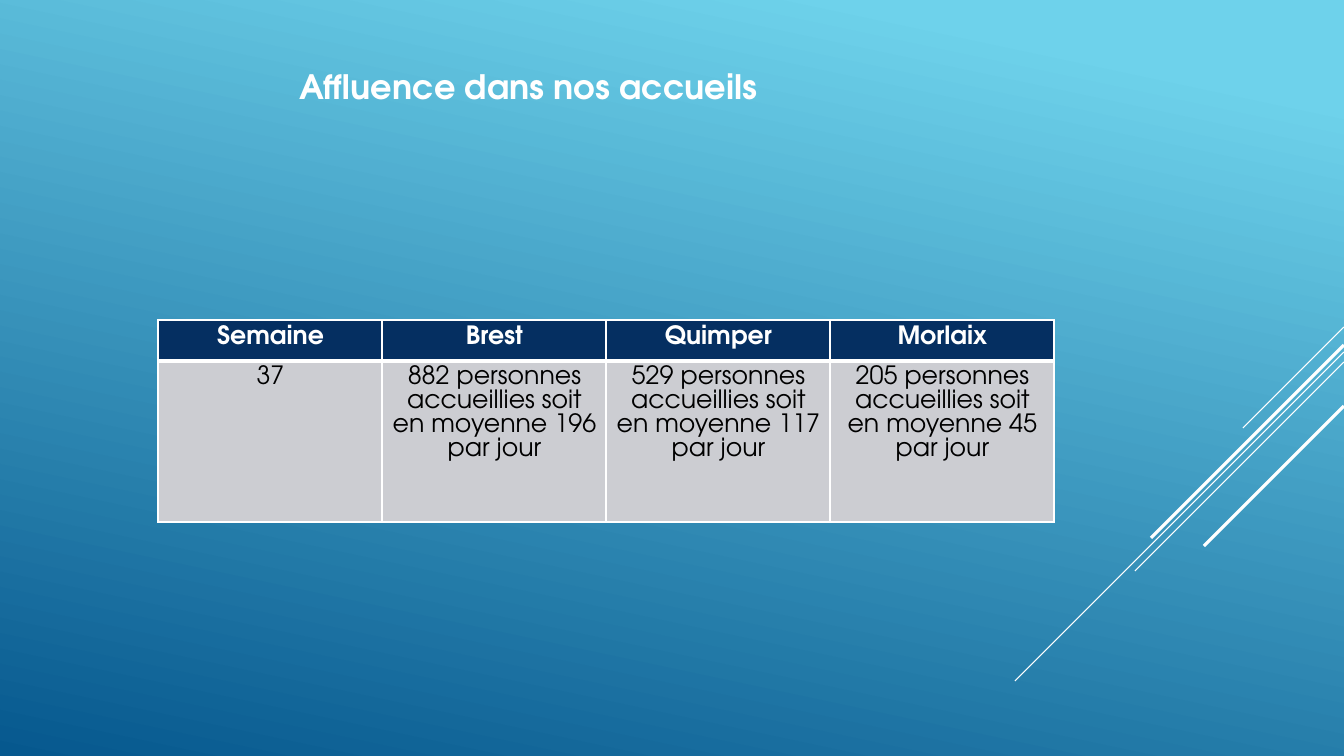
from dataclasses import dataclass

from lxml import etree
from pptx import Presentation
from pptx.dml.color import RGBColor
from pptx.enum.shapes import MSO_CONNECTOR
from pptx.enum.text import MSO_ANCHOR, MSO_AUTO_SIZE, PP_ALIGN
from pptx.oxml.ns import qn
from pptx.util import Emu, Pt

STRAIGHT = MSO_CONNECTOR.STRAIGHT
TOP, MIDDLE = MSO_ANCHOR.TOP, MSO_ANCHOR.MIDDLE
LEFT, CENTER = PP_ALIGN.LEFT, PP_ALIGN.CENTER
NO_AUTO_SIZE = MSO_AUTO_SIZE.NONE

SLIDE_WIDTH, SLIDE_HEIGHT = 1344, 756
TITLE_ONLY = 5
TITLE = "Affluence dans nos accueils"
WEEK = "37"
ATTENDANCE = [("Brest", 882, 196), ("Quimper", 529, 117), ("Morlaix", 205, 45)]
DIAGONALS = [(327, 101, 0.75), (352, 329, 0.75), (362, 209, 0.75),
             (345, 193, 2.25), (406, 140, 2.25)]


@dataclass(frozen=True)
class Theme:
    """Colours, font and sizes of the slide."""

    font: str = "TeX Gyre Adventor"
    white: str = "FFFFFF"
    black: str = "000000"
    header: str = "052F61"
    body: str = "CCCDD2"
    sky: str = "6ED2EB"
    sea: str = "06588E"
    title_size: int = 24
    table_size: int = 18
    thin: int = 1
    thick: int = 3


THEME = Theme()


def px(length):
    """Turn pixels into EMU."""
    return Emu(round(length * 914400 / 100.8))


def rgb(value):
    """Turn a hexadecimal string into a colour."""
    return RGBColor.from_string(value)


def apply(target, values):
    """Set every attribute of a format dict on the target."""
    for name, value in values.items():
        setattr(target, name, value)


def write(text_frame, text, size, color, bold, alignment, line_spacing):
    """Write one formatted paragraph into a text frame."""
    paragraph = text_frame.paragraphs[0]
    apply(paragraph, {"alignment": alignment, "line_spacing": line_spacing})
    run = paragraph.add_run()
    run.text = text
    apply(run.font, {"name": THEME.font, "size": Pt(size), "bold": bold})
    run.font.color.rgb = rgb(color)


def paint_background(slide):
    """Fill the background with a slanted gradient."""
    fill = slide.background.fill
    fill.gradient()
    fill.gradient_angle = 258
    stops = [(0.1, THEME.sky), (1.0, THEME.sea)]
    for stop, (position, color) in zip(fill.gradient_stops, stops):
        stop.position = position
        stop.color.rgb = rgb(color)


def add_diagonal(slide, top, length, weight):
    """Draw a 45 degree line down from the right edge."""
    line = slide.shapes.add_connector(
        STRAIGHT, px(SLIDE_WIDTH), px(top), px(SLIDE_WIDTH - length), px(top + length))
    line.line.color.rgb = rgb(THEME.white)
    line.line.width = Pt(weight)
    etree.SubElement(line._element.spPr, qn("a:effectLst"))


def format_title(slide):
    """Place and write the title."""
    title = slide.shapes.title
    apply(title, {"left": px(289), "top": px(61), "width": px(668), "height": px(51)})
    apply(title.text_frame, {"word_wrap": True, "auto_size": NO_AUTO_SIZE,
                             "vertical_anchor": MIDDLE})
    write(title.text_frame, TITLE, THEME.title_size, THEME.white, True, LEFT, 1.0)


def set_borders(cell, weights):
    """Give a cell white borders of the given weights."""
    properties = cell._tc.get_or_add_tcPr()
    for index, (side, weight) in enumerate(weights.items()):
        border = etree.Element(qn(f"a:ln{side}"), w=str(Pt(weight)))
        fill = etree.SubElement(border, qn("a:solidFill"))
        etree.SubElement(fill, qn("a:srgbClr"), val=THEME.white)
        properties.insert(index, border)


def format_cell(cell, text, is_header):
    """Write, fill and outline one table cell."""
    apply(cell, {"margin_left": px(8), "margin_right": px(7), "margin_top": px(5),
                 "margin_bottom": 0, "vertical_anchor": TOP})
    cell.fill.solid()
    cell.fill.fore_color.rgb = rgb(THEME.header if is_header else THEME.body)
    color = THEME.white if is_header else THEME.black
    write(cell.text_frame, text, THEME.table_size, color, is_header, CENTER, Pt(17))
    thin, thick = THEME.thin, THEME.thick
    set_borders(cell, {"L": thin, "R": thin, "T": thin if is_header else thick,
                       "B": thick if is_header else thin})


def add_attendance_table(slide):
    """Add the table of visitors per town."""
    header = ["Semaine"] + [town for town, _, _ in ATTENDANCE]
    body = [WEEK] + [f"{total} personnes accueillies soit en moyenne {mean} par jour"
                     for _, total, mean in ATTENDANCE]
    rows, heights = [header, body], [41, 161]
    table = slide.shapes.add_table(
        len(rows), len(header), px(158), px(320), px(896), px(sum(heights))).table
    for row_index, (texts, height) in enumerate(zip(rows, heights)):
        table.rows[row_index].height = px(height)
        for column_index, text in enumerate(texts):
            format_cell(table.cell(row_index, column_index), text, row_index == 0)


def main():
    """Build and save the slide."""
    presentation = Presentation()
    apply(presentation, {"slide_width": px(SLIDE_WIDTH), "slide_height": px(SLIDE_HEIGHT)})
    slide = presentation.slides.add_slide(presentation.slide_layouts[TITLE_ONLY])
    paint_background(slide)
    for diagonal in DIAGONALS:
        add_diagonal(slide, *diagonal)
    format_title(slide)
    add_attendance_table(slide)
    presentation.save("out.pptx")


if __name__ == "__main__":
    main()
